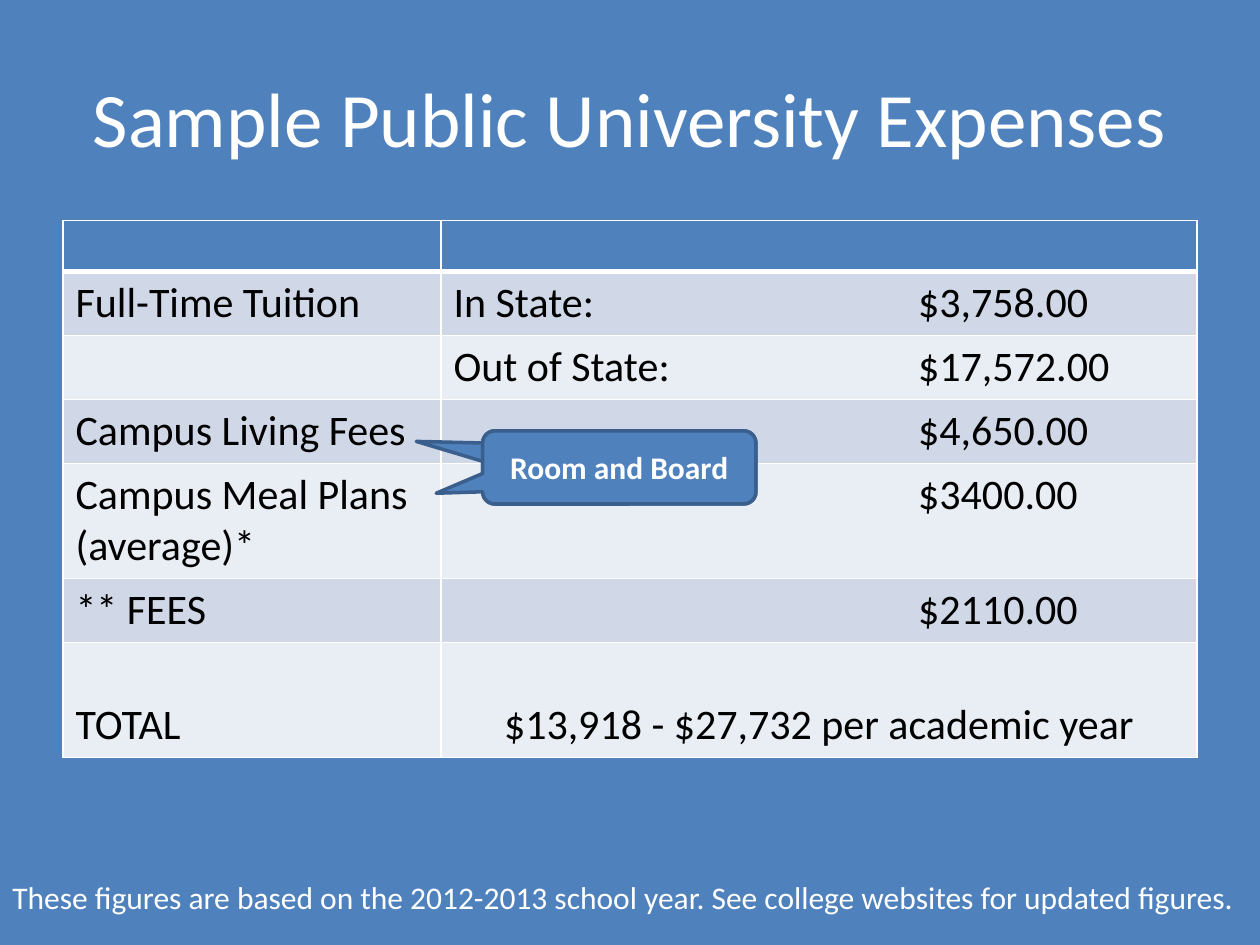
"""Build a slide with a table of sample public university expenses."""
import pptx
import pptx.dml.color
import pptx.enum.shapes
import pptx.enum.text
import pptx.oxml
import pptx.oxml.ns
import pptx.util

Pt = pptx.util.Pt
RGBColor = pptx.dml.color.RGBColor
ALIGN = pptx.enum.text.PP_ALIGN
ANCHOR = pptx.enum.text.MSO_ANCHOR

BLUE = RGBColor(0x4F, 0x81, 0xBD)
DARK_BLUE = RGBColor(0x3A, 0x5F, 0x8C)
BAND_DARK = RGBColor(0xD0, 0xD8, 0xE8)
BAND_LIGHT = RGBColor(0xE9, 0xED, 0xF4)
WHITE = RGBColor(0xFF, 0xFF, 0xFF)
BLACK = RGBColor(0, 0, 0)

TITLE = "Sample Public University Expenses"
FOOTNOTE = ("These figures are based on the 2012-2013 school year. "
            "See college websites for updated figures.")
EXPENSES = [
    ("", ""),
    ("Full-Time Tuition", "In State:\t$3,758.00"),
    ("", "Out of State:\t$17,572.00"),
    ("Campus Living Fees", "\t$4,650.00"),
    ("Campus Meal Plans (average)*", "\t$3400.00"),
    ("** FEES", "\t$2110.00"),
    ("TOTAL", "$13,918 - $27,732 per academic year"),
]
CALLOUTS = [("", (-0.743, -0.355, 0.167)),
            ("Room and Board", (-0.67, 0.353, 0.167))]

COLUMN_WIDTHS = (216, 432)
HEADER_HEIGHT, LINE_HEIGHT, DOUBLE_HEIGHT = 29.2, 36.55, 65.7
ROW_HEIGHTS = [HEADER_HEIGHT] + [LINE_HEIGHT] * 3 + [DOUBLE_HEIGHT, LINE_HEIGHT, DOUBLE_HEIGHT]
AMOUNT_TAB = 265.5
TABLE_BOX = (36, 126, sum(COLUMN_WIDTHS), sum(ROW_HEIGHTS))
TITLE_BOX = (36, 21.6, 648, 90)
FOOTNOTE_BOX = (0, 498.2, 720, 29)
CALLOUT_BOX = (275.8, 246.2, 156.2, 41.8)


def points(box):
    return [Pt(length) for length in box]


def write(frame, text, size, color, align=ALIGN.LEFT, bold=False):
    paragraph = frame.paragraphs[0]
    paragraph.alignment = align
    run = paragraph.add_run()
    run.text = text
    for name, value in {"name": "Calibri", "size": Pt(size), "bold": bold}.items():
        setattr(run.font, name, value)
    run.font.color.rgb = color
    return paragraph


def set_borders(cell, widths):
    properties = cell._tc.get_or_add_tcPr()
    for position, (side, width) in enumerate(widths.items()):
        properties.insert(position, pptx.oxml.parse_xml(
            f'<a:ln{side} {pptx.oxml.ns.nsdecls("a")} w="{Pt(width)}">'
            f'<a:solidFill><a:srgbClr val="{WHITE}"/></a:solidFill></a:ln{side}>'))


def set_tab(paragraph, position):
    paragraph._p.get_or_add_pPr().append(pptx.oxml.parse_xml(
        f'<a:tabLst {pptx.oxml.ns.nsdecls("a")}>'
        f'<a:tab pos="{Pt(position)}" algn="l"/></a:tabLst>'))


def add_expenses(slide):
    expenses = slide.shapes.add_table(
        len(EXPENSES), len(COLUMN_WIDTHS), *points(TABLE_BOX)).table
    for column, width in zip(expenses.columns, COLUMN_WIDTHS):
        column.width = Pt(width)
    total = len(EXPENSES) - 1
    for index, (entry, height) in enumerate(zip(EXPENSES, ROW_HEIGHTS)):
        expenses.rows[index].height = Pt(height)
        band = BLUE if index == 0 else (BAND_LIGHT, BAND_DARK)[index % 2]
        for position, text in enumerate(entry):
            cell = expenses.cell(index, position)
            cell.fill.solid()
            cell.fill.fore_color.rgb = band
            set_borders(cell, {"L": 1, "R": 1, "T": 3 if index == 1 else 1,
                               "B": 3 if index == 0 else 1})
            cell.vertical_anchor = ANCHOR.BOTTOM if index == total else ANCHOR.TOP
            if text:
                centred = index == total and position == 1
                paragraph = write(cell.text_frame, text, 24, BLACK,
                                  ALIGN.CENTER if centred else ALIGN.LEFT)
                if "\t" in text:
                    set_tab(paragraph, AMOUNT_TAB)


def add_callout(slide, label, adjustments):
    callout = slide.shapes.add_shape(
        pptx.enum.shapes.MSO_SHAPE.ROUNDED_RECTANGULAR_CALLOUT, *points(CALLOUT_BOX))
    callout.shadow.inherit = False
    for index, value in enumerate(adjustments):
        callout.adjustments[index] = value
    callout.fill.solid()
    callout.fill.fore_color.rgb = BLUE
    callout.line.color.rgb = DARK_BLUE
    callout.line.width = Pt(2)
    callout.text_frame.word_wrap = True
    callout.text_frame.vertical_anchor = ANCHOR.MIDDLE
    if label:
        write(callout.text_frame, label, 18, WHITE, ALIGN.CENTER, bold=True)


def main():
    deck = pptx.Presentation()
    deck.slide_width, deck.slide_height = Pt(720), Pt(540)
    slide = deck.slides.add_slide(deck.slide_layouts[5])
    slide.background.fill.solid()
    slide.background.fill.fore_color.rgb = BLUE

    title = slide.shapes.title
    for name, value in zip(("left", "top", "width", "height"), points(TITLE_BOX)):
        setattr(title, name, value)
    title.text_frame.vertical_anchor = ANCHOR.MIDDLE
    write(title.text_frame, TITLE, 44, WHITE, ALIGN.CENTER)

    add_expenses(slide)

    footnote = slide.shapes.add_textbox(*points(FOOTNOTE_BOX))
    footnote.text_frame.word_wrap = True
    write(footnote.text_frame, FOOTNOTE, 18, WHITE)

    for label, adjustments in CALLOUTS:
        add_callout(slide, label, adjustments)
    deck.save("out.pptx")


if __name__ == "__main__":
    main()
